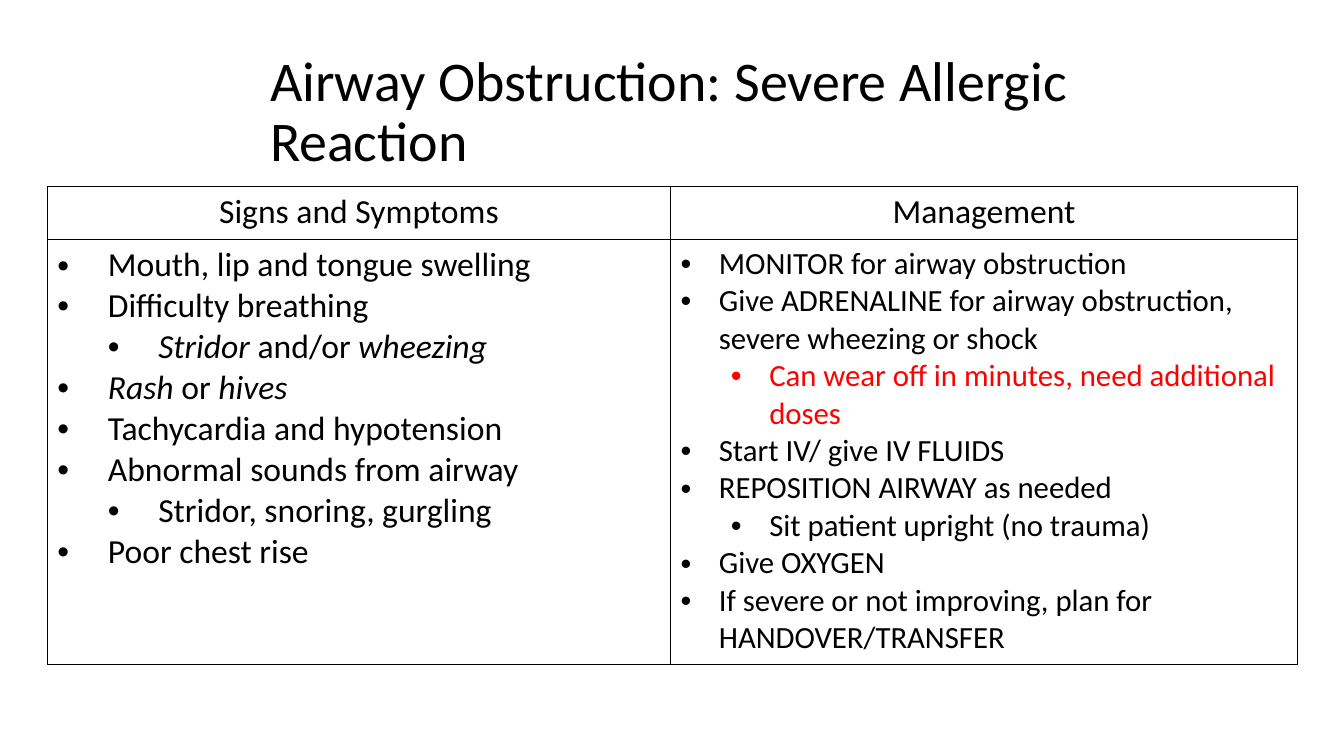
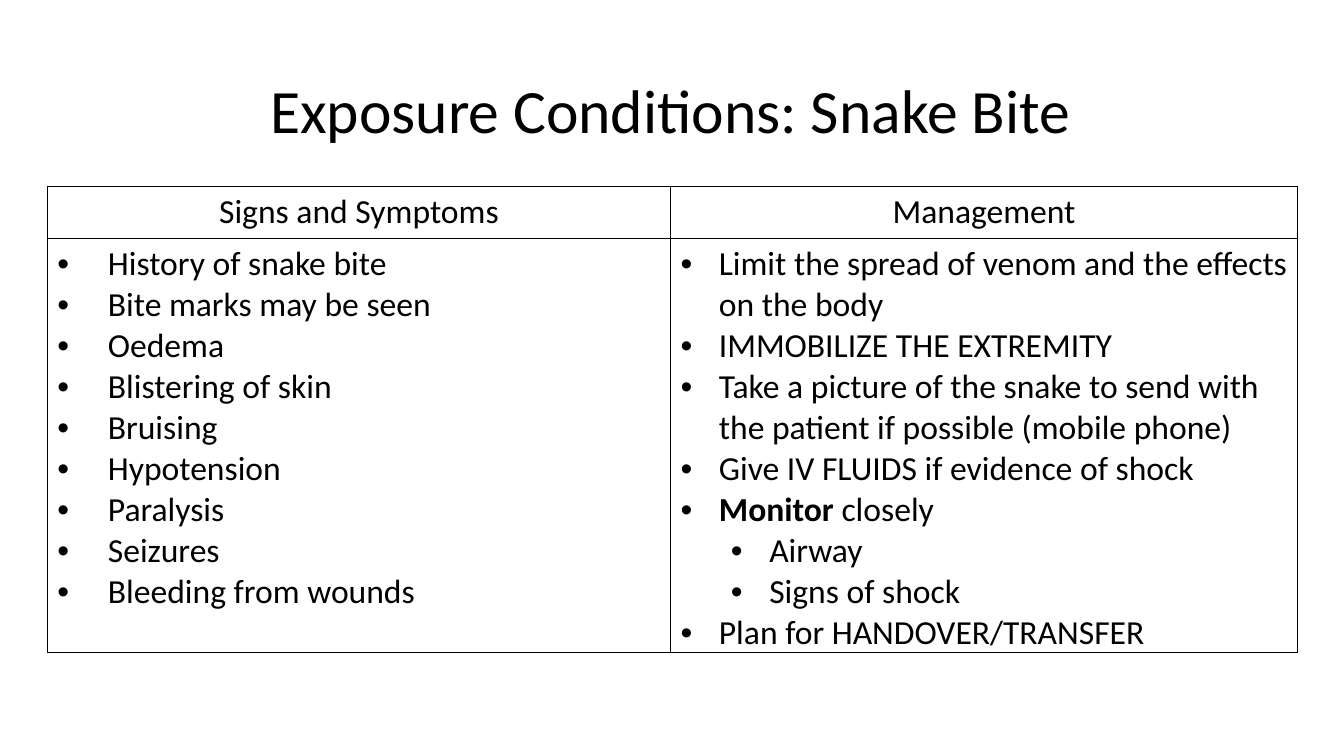
from lxml import etree
from pptx import Presentation
from pptx import util as u
from pptx.dml.color import RGBColor
from pptx.enum import text
from pptx.oxml import ns

PX = 9144  # 100 px to the inch
FONT = "Calibri"
BLACK, RED = "000000", "FF0000"
HEADINGS = ("Signs and Symptoms", "Management")
HEADING_SIZE = 24
COLUMNS = (618, 622)
HANGS = (50, 38)
LEVEL_STEP = 50
TABLE_LEFT, TABLE_TOP = 47, 185


def px(n):
    return u.Emu(n * PX)


def color(value):
    return RGBColor.from_string(value)


def add_runs(p, runs, size, hue=BLACK):
    """Runs are plain strings or (string, "i" or "b") pairs."""
    for run in runs:
        words, style = (run, "") if isinstance(run, str) else run
        r = p.add_run()
        r.text = words
        r.font.name, r.font.size = FONT, u.Pt(size)
        r.font.color.rgb = color(hue)
        r.font.italic, r.font.bold = style == "i", style == "b"


def add_bullet(p, level, hang):
    p.level = level
    pPr = p._p.get_or_add_pPr()
    pPr.set("marL", str(px(hang + level * LEVEL_STEP)))
    pPr.set("indent", str(-px(hang)))
    etree.SubElement(pPr, ns.qn("a:buFont"), typeface="Arial")
    etree.SubElement(pPr, ns.qn("a:buChar"), char="•")


def style_cell(cell):
    tcPr = cell._tc.get_or_add_tcPr()
    for side in "LRTB":
        ln = etree.SubElement(tcPr, ns.qn("a:ln" + side), w=str(u.Pt(1)))
        fill = etree.SubElement(ln, ns.qn("a:solidFill"))
        etree.SubElement(fill, ns.qn("a:srgbClr"), val=BLACK)
    cell.fill.background()


def fill_list(cell, items, size, hang):
    """Items are (level, runs) or (level, runs, colour)."""
    tf = cell.text_frame
    for i, (level, runs, *hue) in enumerate(items):
        p = tf.add_paragraph() if i else tf.paragraphs[0]
        add_bullet(p, level, hang)
        add_runs(p, runs, size, *hue)


def add_title(slide, title, size, x, y, w, h):
    sp = slide.shapes.add_textbox(px(x), px(y), px(w), px(h))
    tf = sp.text_frame
    tf.word_wrap = True
    tf.vertical_anchor = text.MSO_ANCHOR.MIDDLE
    p = tf.paragraphs[0]
    p.line_spacing = 0.9
    add_runs(p, [title], size)


def add_care_table(slide, lists, sizes, rows, x, y):
    frame = slide.shapes.add_table(2, 2, px(x), px(y), px(sum(COLUMNS)), px(sum(rows)))
    table = frame.table
    table.first_row = table.horz_banding = False
    for row, height in zip(table.rows, rows):
        row.height = px(height)
    for i, width in enumerate(COLUMNS):
        table.columns[i].width = px(width)
        heading, body = table.cell(0, i), table.cell(1, i)
        style_cell(heading)
        style_cell(body)
        p = heading.text_frame.paragraphs[0]
        p.alignment = text.PP_ALIGN.CENTER
        add_runs(p, [HEADINGS[i]], HEADING_SIZE)
        fill_list(body, lists[i], sizes[i], HANGS[i])


def add_condition_slide(prs, title, title_size, title_width, lists, sizes, rows):
    slide = prs.slides.add_slide(prs.slide_layouts[6])
    add_title(slide, title, title_size, 258, 40, title_width, 145)
    add_care_table(slide, lists, sizes, rows, TABLE_LEFT, TABLE_TOP)


ALLERGY_SIGNS = [
    (0, ["Mouth, lip and tongue swelling"]),
    (0, ["Difficulty breathing"]),
    (1, [("Stridor", "i"), " and/or ", ("wheezing", "i")]),
    (0, [("Rash ", "i"), "or", (" hives", "i")]),
    (0, ["Tachycardia and hypotension"]),
    (0, ["Abnormal sounds from airway"]),
    (1, ["Stridor, snoring, gurgling"]),
    (0, ["Poor chest rise"]),
]
ALLERGY_CARE = [
    (0, ["MONITOR for airway obstruction"]),
    (0, ["Give ADRENALINE for airway obstruction, severe wheezing or shock"]),
    (1, ["Can wear off in minutes, need additional doses"], RED),
    (0, ["Start IV/ give IV FLUIDS"]),
    (0, ["REPOSITION AIRWAY as needed"]),
    (1, ["Sit patient upright (no trauma)"]),
    (0, ["Give OXYGEN"]),
    (0, ["If severe or not improving, plan for HANDOVER/TRANSFER"]),
]
SNAKE_SIGNS = [(0, [sign]) for sign in (
    "History of snake bite", "Bite marks may be seen", "Oedema",
    "Blistering of skin", "Bruising", "Hypotension", "Paralysis",
    "Seizures", "Bleeding from wounds")]
SNAKE_CARE = [
    (0, ["Limit the spread of venom and the effects on the body"]),
    (0, ["IMMOBILIZE THE EXTREMITY"]),
    (0, ["Take a picture of the snake to send with the patient if possible (mobile phone)"]),
    (0, ["Give IV FLUIDS if evidence of shock"]),
    (0, [("Monitor", "b"), " closely"]),
    (1, ["Airway"]),
    (1, ["Signs of shock"]),
    (0, ["Plan for HANDOVER/TRANSFER"]),
]


def main():
    prs = Presentation()
    prs.slide_width, prs.slide_height = px(1333), px(750)
    add_condition_slide(prs, "Airway Obstruction: Severe Allergic Reaction", 40, 1013,
                        (ALLERGY_SIGNS, ALLERGY_CARE), (24, 22), (53, 421))
    add_condition_slide(prs, "Exposure Conditions: Snake Bite", 44, 1028,
                        (SNAKE_SIGNS, SNAKE_CARE), (24, 24), (52, 410))
    prs.save("out.pptx")


if __name__ == "__main__":
    main()
